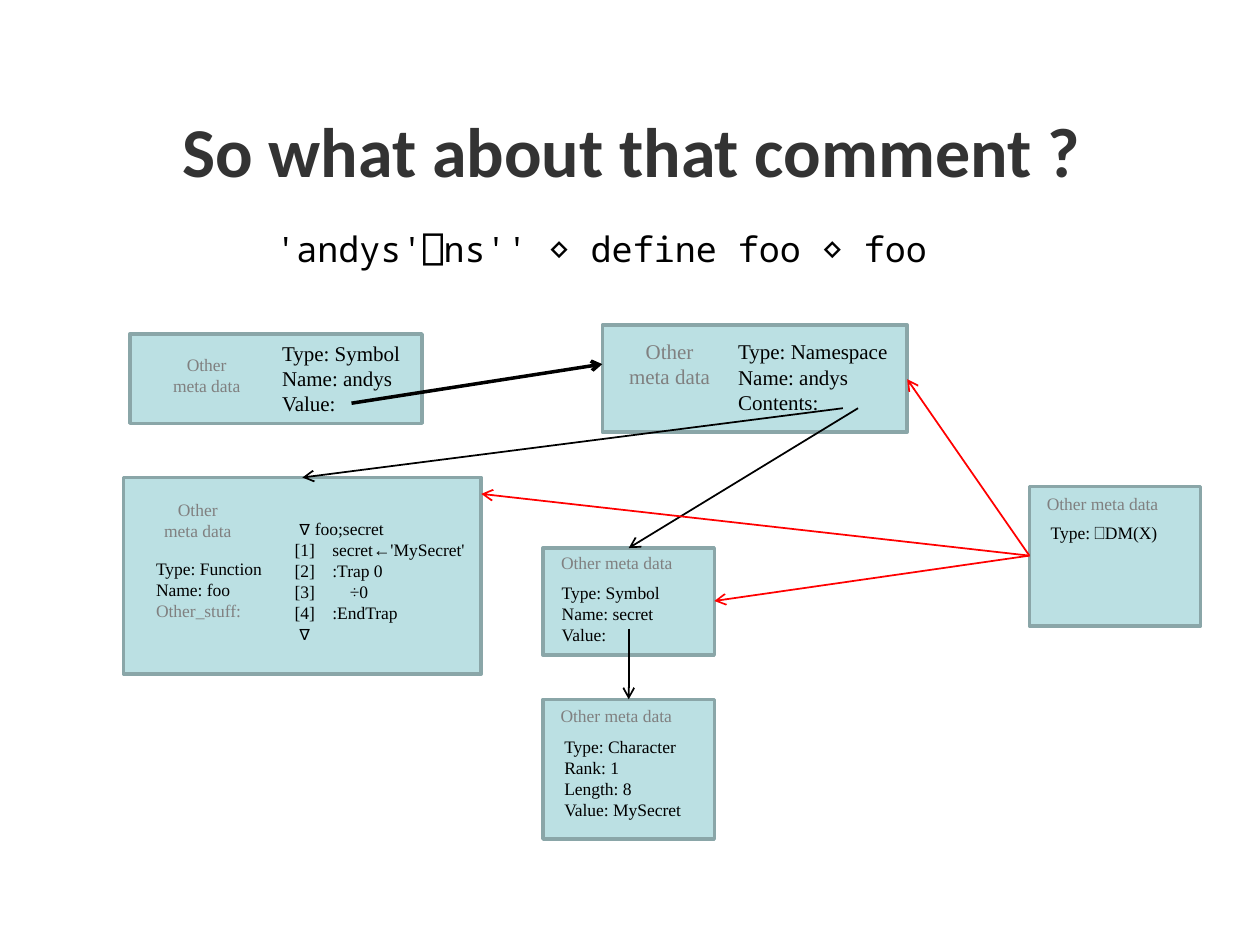
from lxml import etree
from pptx import Presentation
from pptx.dml.color import RGBColor
from pptx.enum.shapes import MSO_CONNECTOR, MSO_SHAPE
from pptx.enum.text import MSO_ANCHOR, PP_ALIGN
from pptx.oxml.ns import qn
from pptx.util import Inches, Pt

LEFT, CENTER = PP_ALIGN.LEFT, PP_ALIGN.CENTER
TOP, MIDDLE = MSO_ANCHOR.TOP, MSO_ANCHOR.MIDDLE
RECTANGLE = MSO_SHAPE.RECTANGLE
STRAIGHT = MSO_CONNECTOR.STRAIGHT
BLACK, GREY, RED = "000000", "808080", "FF0000"

deck = Presentation()
deck.slide_width, deck.slide_height = Inches(10), Inches(7.5)
page = deck.slides.add_slide(deck.slide_layouts[6])


def color(hex_string):
    return RGBColor.from_string(hex_string)


def add_text(text, left, top, width, height, size=10, font="Times New Roman",
             fill=BLACK, bold=False, align=LEFT, anchor=TOP):
    box = page.shapes.add_textbox(Inches(left), Inches(top), Inches(width), Inches(height))
    frame = box.text_frame
    frame.word_wrap = True
    frame.vertical_anchor = anchor
    for index, line in enumerate(text.split("\n")):
        para = frame.paragraphs[0] if index == 0 else frame.add_paragraph()
        para.alignment = align
        span = para.add_run()
        span.text = line
        span.font.name = font
        span.font.size = Pt(size)
        span.font.bold = bold
        span.font.color.rgb = color(fill)
    return frame


add_text("So what about that comment ?", 0.51, 0.76, 9, 0.86, size=40, font="Calibri",
         fill="333333", bold=True, align=CENTER, anchor=MIDDLE)
add_text("'andys'⎕ns'' ⋄ define foo ⋄ foo", 1.96, 1.76, 5.63, 0.44, size=20,
         font="Noto Sans Mono", align=CENTER)

node_boxes = [
    (0.98, 3.79, 2.84, 1.56),
    (1.03, 2.65, 2.32, 0.71),
    (4.78, 2.58, 2.42, 0.85),
    (4.31, 4.35, 1.36, 0.85),
    (4.31, 5.55, 1.36, 1.11),
    (8.17, 3.86, 1.36, 1.11),
]
for left, top, width, height in node_boxes:
    node = page.shapes.add_shape(RECTANGLE, Inches(left), Inches(top), Inches(width), Inches(height))
    node.shadow.inherit = False
    node.fill.solid()
    node.fill.fore_color.rgb = color("BBE0E3")
    node.line.color.rgb = color("8AA6A8")
    node.line.width = Pt(2)

meta_labels = [
    ("Other\nmeta data", 1.05, 3.91, 1.04, 0.44, 10),
    ("Other\nmeta data", 1.03, 2.76, 1.22, 0.44, 10),
    ("Other\nmeta data", 4.78, 2.64, 1.07, 0.5, 12),
    ("Other meta data", 4.33, 4.33, 1.13, 0.27, 10),
    ("Other meta data", 4.3, 5.55, 1.18, 0.27, 10),
    ("Other meta data", 8.16, 3.86, 1.18, 0.27, 10),
]
for text, left, top, width, height, size in meta_labels:
    add_text(text, left, top, width, height, size=size, fill=GREY, align=CENTER)

function_frame = add_text("Type: Function\nName: foo\nOther_stuff:", 1.14, 4.38, 1.05, 0.61)
function_frame.paragraphs[2].runs[0].font.color.rgb = color(GREY)

function_code = """ ∇ foo;secret
[1]    secret←'MySecret'
[2]    :Trap 0
[3]        ÷0
[4]    :EndTrap
 ∇"""
node_details = [
    ("Type: Symbol\nName: andys\nValue:", 2.14, 2.65, 1.2, 0.71, 12),
    ("Type: Namespace\nName: andys\nContents:", 5.76, 2.64, 1.85, 0.71, 12),
    (function_code, 2.24, 4.06, 1.65, 1.11, 10),
    ("Type: Symbol\nName: secret\nValue:", 4.36, 4.57, 1.18, 0.61, 10),
    ("Type: Character\nRank: 1\nLength: 8\nValue: MySecret", 4.38, 5.79, 1.18, 0.77, 10),
    ("Type: ⎕DM(X)", 8.24, 4.09, 1.18, 0.27, 10),
]
for text, left, top, width, height, size in node_details:
    add_text(text, left, top, width, height, size=size)

arrows = [
    (2.79, 3.2, 4.78, 2.89, BLACK, 2),
    (6.69, 3.24, 2.4, 3.79, BLACK, 1),
    (6.81, 3.24, 4.99, 4.35, BLACK, 1),
    (4.99, 4.99, 4.99, 5.55, BLACK, 1),
    (8.17, 4.41, 7.2, 3.01, RED, 1),
    (8.17, 4.41, 3.82, 3.92, RED, 1),
    (8.17, 4.41, 5.67, 4.77, RED, 1),
]
for start_x, start_y, end_x, end_y, stroke, weight in arrows:
    arrow = page.shapes.add_connector(STRAIGHT, Inches(start_x), Inches(start_y),
                                      Inches(end_x), Inches(end_y))
    arrow.line.color.rgb = color(stroke)
    arrow.line.width = Pt(weight)
    etree.SubElement(arrow.line._get_or_add_ln(), qn("a:tailEnd"), type="arrow")
    etree.SubElement(arrow._element.spPr, qn("a:effectLst"))

deck.save("out.pptx")
